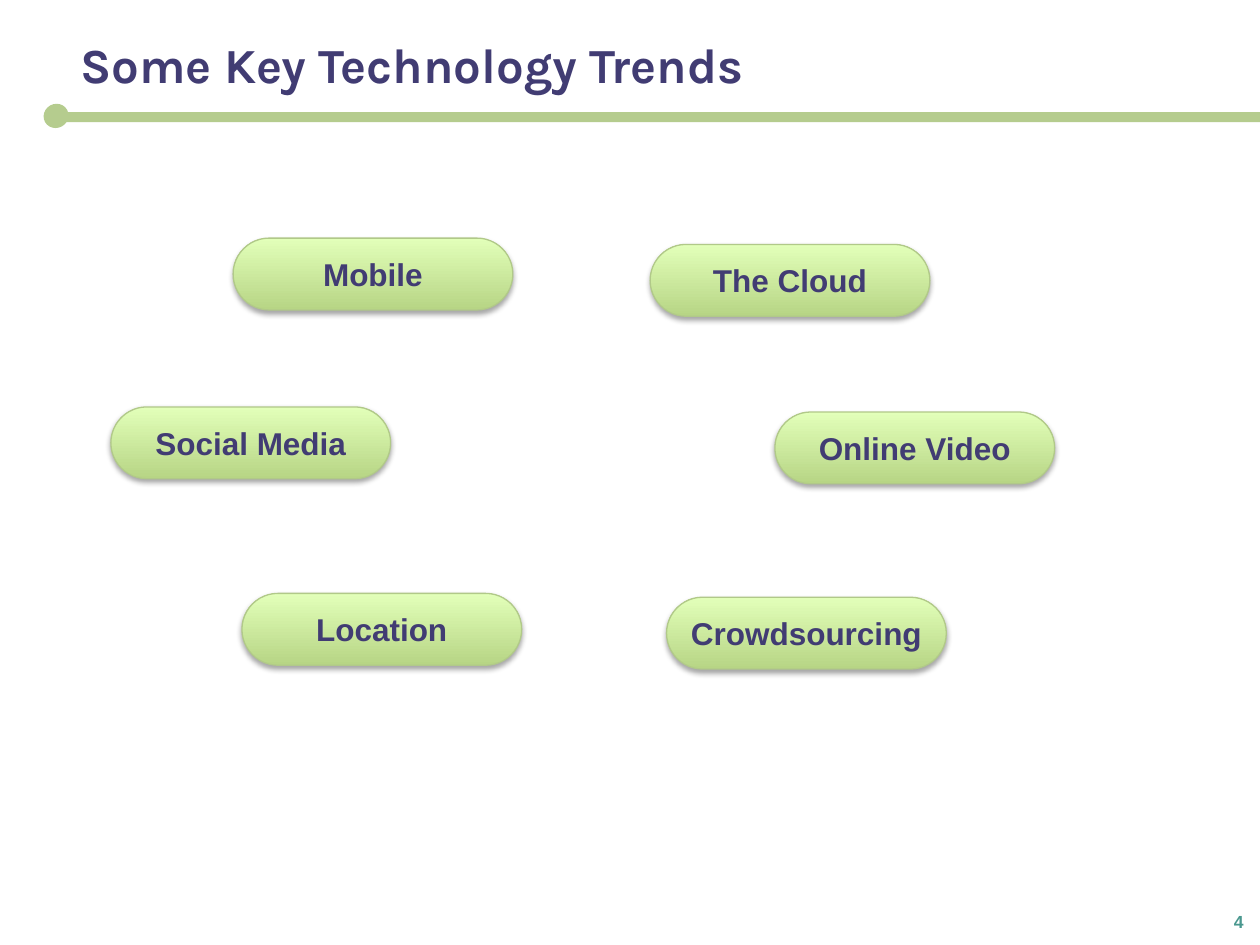
from lxml import etree
from pptx import Presentation
from pptx.dml.color import RGBColor
from pptx.enum.shapes import MSO_SHAPE
from pptx.enum.text import MSO_ANCHOR, PP_ALIGN
from pptx.oxml.ns import qn
from pptx.util import Inches, Pt

RECT, OVAL, PILL = MSO_SHAPE.RECTANGLE, MSO_SHAPE.OVAL, MSO_SHAPE.ROUNDED_RECTANGLE
MIDDLE = MSO_ANCHOR.MIDDLE
LEFT, CENTER, RIGHT = PP_ALIGN.LEFT, PP_ALIGN.CENTER, PP_ALIGN.RIGHT

TITLE = "Some Key Technology Trends"
PAGE = "4"
TRENDS = [  # label, left, top
    ("The Cloud", 5.16, 1.94),
    ("Mobile", 1.85, 1.89),
    ("Location", 1.92, 4.71),
    ("Crowdsourcing", 5.29, 4.74),
    ("Online Video", 6.15, 3.27),
    ("Social Media", 0.88, 3.23),
]
PILL_SIZE = (2.22, 0.57)
PILL_GRADIENT = ("B7D585", "E2FFB9")
PILL_LINE = "B1C989"
RULE_COLOR = "B5CC8E"

TITLE_FONT = {"name": "Karla", "size": Pt(28), "bold": True, "color": "413C73"}
TREND_FONT = {"name": "Arial", "size": Pt(18), "bold": True, "color": "413C73"}
PAGE_FONT = {"name": "Arial", "size": Pt(10), "bold": True, "color": "4A988F"}


def rgb(value):
    return RGBColor.from_string(value)


def write(frame, text, font, align, wrap=True):
    frame.word_wrap = wrap
    frame.vertical_anchor = MIDDLE
    paragraph = frame.paragraphs[0]
    paragraph.alignment = align
    run = paragraph.add_run()
    run.text = text
    for key, value in font.items():
        if key == "color":
            run.font.color.rgb = rgb(value)
        else:
            setattr(run.font, key, value)


def add_text(slide, box, *text_format, **options):
    frame = slide.shapes.add_textbox(*map(Inches, box)).text_frame
    write(frame, *text_format, **options)
    return frame


def add_rule_part(slide, preset, box):
    part = slide.shapes.add_shape(preset, *map(Inches, box))
    part.shadow.inherit = False
    part.fill.solid()
    part.fill.fore_color.rgb = rgb(RULE_COLOR)
    part.line.fill.background()
    return part


def add_drop_shadow(shape):
    shape.shadow.inherit = False
    effects = shape._element.spPr.find(qn("a:effectLst"))
    shadow = etree.SubElement(effects, qn("a:outerShdw"), blurRad=str(Pt(3.1)),
                              dist=str(Pt(1.8)), dir="5400000", rotWithShape="0")
    color = etree.SubElement(shadow, qn("a:srgbClr"), val="000000")
    etree.SubElement(color, qn("a:alpha"), val="35000")


def add_trend(slide, label, left, top):
    pill = slide.shapes.add_shape(PILL, *map(Inches, (left, top, *PILL_SIZE)))
    pill.adjustments[0] = 0.5
    pill.fill.gradient()
    pill.fill.gradient_angle = 90
    for stop, color in zip(pill.fill.gradient_stops, PILL_GRADIENT):
        stop.color.rgb = rgb(color)
    pill.line.color.rgb = rgb(PILL_LINE)
    pill.line.width = Pt(0.75)
    add_drop_shadow(pill)
    write(pill.text_frame, label, TREND_FONT, CENTER)


def main():
    deck = Presentation()
    deck.slide_width, deck.slide_height = Inches(10), Inches(7.5)
    slide = deck.slides.add_slide(deck.slide_layouts[6])

    page = add_text(slide, (9.7, 7.23, 0.17, 0.17), PAGE, PAGE_FONT, RIGHT, wrap=False)
    for side in ("left", "top", "right", "bottom"):
        setattr(page, f"margin_{side}", 0)

    add_rule_part(slide, RECT, (0.44, 0.89, 9.56, 0.08))
    add_rule_part(slide, OVAL, (0.35, 0.82, 0.19, 0.2)).rotation = 61
    add_text(slide, (0.54, 0.21, 9.37, 0.59), TITLE, TITLE_FONT, LEFT)
    for trend in TRENDS:
        add_trend(slide, *trend)

    deck.save("out.pptx")


if __name__ == "__main__":
    main()
